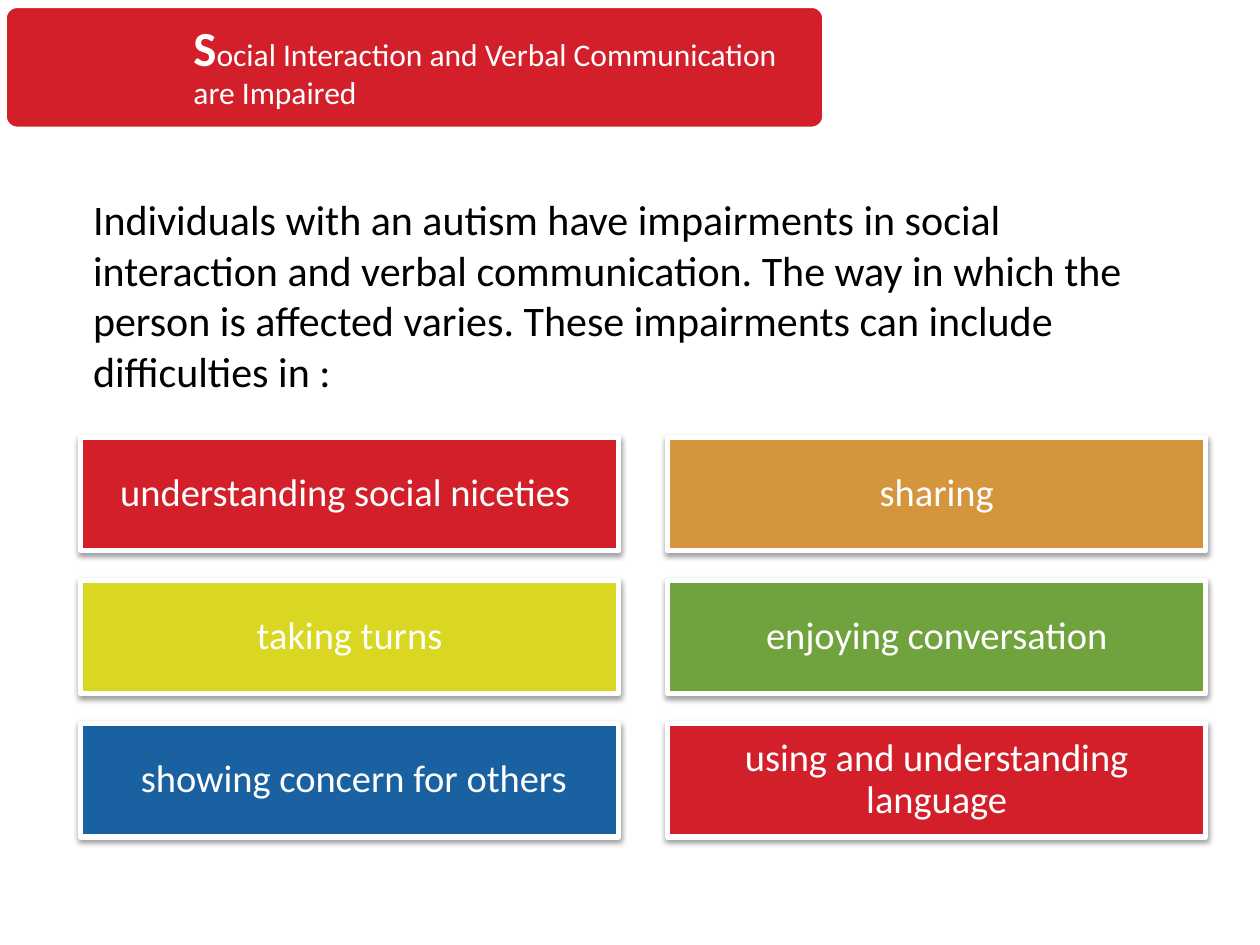
import dataclasses
import typing

import pptx
import pptx.dml.color
import pptx.enum.shapes
import pptx.enum.text
import pptx.oxml
import pptx.oxml.ns
import pptx.util

Pt = pptx.util.Pt
RGBColor = pptx.dml.color.RGBColor
Anchor = pptx.enum.text.MSO_ANCHOR
Align = pptx.enum.text.PP_ALIGN
ShapeKind = pptx.enum.shapes.MSO_SHAPE


@dataclasses.dataclass(frozen=True)
class Theme:
    font: str = "Calibri"
    red: str = "D31F29"
    orange: str = "D5953C"
    yellow: str = "D9D721"
    green: str = "70A33E"
    blue: str = "1A61A2"
    white: str = "FFFFFF"
    black: str = "000000"
    initial_size: float = 28
    title_size: float = 18
    body_size: float = 24
    card_size: float = 22


@dataclasses.dataclass(frozen=True)
class Box:
    left: float
    top: float
    width: float
    height: float

    def lengths(self) -> tuple:
        return tuple(Pt(value) for value in dataclasses.astuple(self))


@dataclasses.dataclass(frozen=True)
class TextRun:
    text: str
    size: float
    color: str
    bold: bool = False


class Card(typing.NamedTuple):
    text: str
    fill: str


THEME = Theme()
BANNER = Box(2.9, 3.6, 468, 69.8)
BANNER_TEXT = Box(102.2, 3.6, 368, 69.8)
INTRODUCTION = Box(46.1, 107.3, 643, 123.8)
FIRST_CARD = Box(46.1, 250, 307.4, 64.8)
COLUMN_PITCH = 335.5
ROW_PITCH = 81.75
CARDS = [
    Card("understanding social niceties ", THEME.red),
    Card("sharing", THEME.orange),
    Card("taking turns", THEME.yellow),
    Card("enjoying conversation", THEME.green),
    Card(" showing concern for others", THEME.blue),
    Card("using and understanding language", THEME.red),
]


def write_text(shape, runs: list[TextRun], alignment=Align.LEFT, anchor=Anchor.TOP,
               margins: tuple[float, float] = (7.2, 3.6), line_spacing: float = 1.0) -> None:
    frame = shape.text_frame
    frame.word_wrap = True
    frame.vertical_anchor = anchor
    frame.margin_left = frame.margin_right = Pt(margins[0])
    frame.margin_top = frame.margin_bottom = Pt(margins[1])
    paragraph = frame.paragraphs[0]
    paragraph.alignment = alignment
    paragraph.line_spacing = line_spacing
    for item in runs:
        run = paragraph.add_run()
        run.text = item.text
        run.font.name = THEME.font
        run.font.size = Pt(item.size)
        run.font.bold = item.bold
        run.font.color.rgb = RGBColor.from_string(item.color)


def draw_block(shapes, kind, box: Box, fill: str, line_width: float):
    shape = shapes.add_shape(kind, *box.lengths())
    shape.shadow.inherit = False
    shape.fill.solid()
    shape.fill.fore_color.rgb = RGBColor.from_string(fill)
    shape.line.color.rgb = RGBColor.from_string(THEME.white)
    shape.line.width = Pt(line_width)
    return shape


def add_shadow(shape) -> None:
    effects = shape.element.spPr.find(pptx.oxml.ns.qn("a:effectLst"))
    effects.append(pptx.oxml.parse_xml(
        f'<a:outerShdw {pptx.oxml.ns.nsdecls("a")} blurRad="{Pt(3.1)}" dist="{Pt(1.6)}" '
        f'dir="5400000" rotWithShape="0"><a:srgbClr val="{THEME.black}">'
        '<a:alpha val="38000"/></a:srgbClr></a:outerShdw>'))


def draw_introduction(slide) -> None:
    shape = slide.shapes.add_textbox(*INTRODUCTION.lengths())
    text = ("Individuals with an autism have impairments in social interaction and verbal "
            "communication. The way in which the person is affected varies. These "
            "impairments can include difficulties in :")
    write_text(shape, [TextRun(text, THEME.body_size, THEME.black)])
    shape.text_frame.auto_size = pptx.enum.text.MSO_AUTO_SIZE.SHAPE_TO_FIT_TEXT


def draw_card(slide, card: Card, row: int, column: int) -> None:
    box = dataclasses.replace(FIRST_CARD, left=FIRST_CARD.left + column * COLUMN_PITCH,
                              top=FIRST_CARD.top + row * ROW_PITCH)
    shape = draw_block(slide.shapes, ShapeKind.RECTANGLE, box, card.fill, 3)
    add_shadow(shape)
    write_text(shape, [TextRun(card.text, THEME.card_size, THEME.white)],
               Align.CENTER, Anchor.MIDDLE, (6.6, 3.3), 0.9)


def draw_banner(slide) -> None:
    group = slide.shapes.add_group_shape()
    background = draw_block(group.shapes, ShapeKind.ROUNDED_RECTANGLE, BANNER, THEME.red, 2)
    background.adjustments[0] = 0.1
    title = group.shapes.add_textbox(*BANNER_TEXT.lengths())
    runs = [
        TextRun("S", THEME.initial_size, THEME.white, True),
        TextRun("ocial Interaction and Verbal Communication are Impaired",
                THEME.title_size, THEME.white),
    ]
    write_text(title, runs, anchor=Anchor.MIDDLE, margins=(8.4, 8.4), line_spacing=0.9)


def main() -> None:
    presentation = pptx.Presentation()
    presentation.slide_width = Pt(720)
    presentation.slide_height = Pt(540)
    slide = presentation.slides.add_slide(presentation.slide_layouts[6])
    draw_introduction(slide)
    for index, card in enumerate(CARDS):
        draw_card(slide, card, *divmod(index, 2))
    draw_banner(slide)
    presentation.save("out.pptx")


if __name__ == "__main__":
    main()
